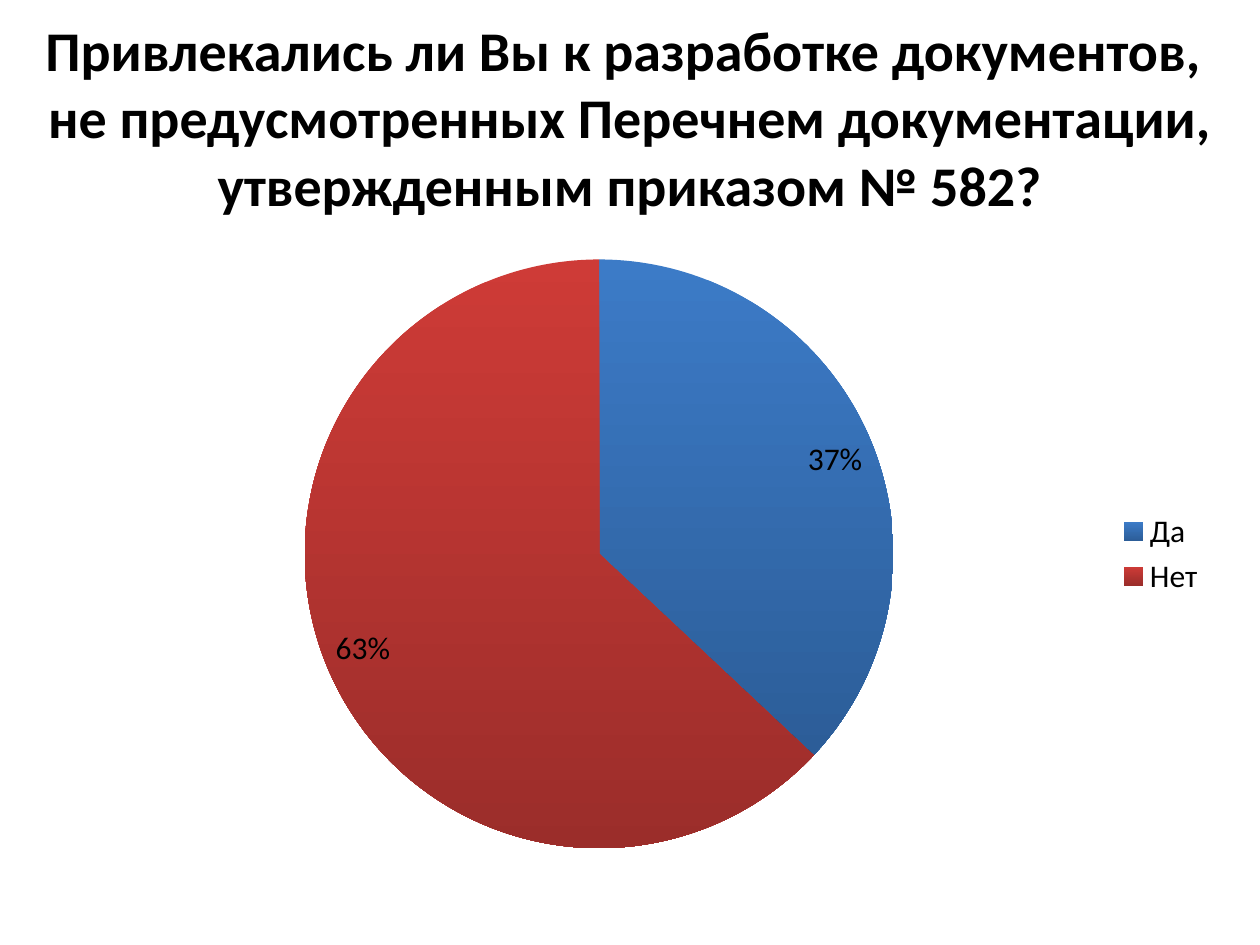
from pptx import Presentation
from pptx.chart.data import CategoryChartData
from pptx.dml.color import RGBColor
from pptx.enum.chart import XL_CHART_TYPE, XL_LABEL_POSITION, XL_LEGEND_POSITION
from pptx.enum.text import MSO_ANCHOR, PP_ALIGN
from pptx.util import Cm, Pt

PIE = XL_CHART_TYPE.PIE
INSIDE_END = XL_LABEL_POSITION.INSIDE_END
RIGHT = XL_LEGEND_POSITION.RIGHT
MIDDLE = MSO_ANCHOR.MIDDLE
CENTER = PP_ALIGN.CENTER

FONT = "Calibri"
COLORS = {
    "text": "000000",
    "yes_top": "3C7BC7",
    "yes_bottom": "2C5D98",
    "no_top": "CE3B37",
    "no_bottom": "9B2D2A",
}


def style_font(font, size, bold=False):
    font.name = FONT
    font.size = Pt(size)
    font.bold = bold
    font.color.rgb = RGBColor.from_string(COLORS["text"])


presentation = Presentation()
presentation.slide_width = Cm(25.4)
presentation.slide_height = Cm(19.05)
slide = presentation.slides.add_slide(presentation.slide_layouts[6])

title = slide.shapes.add_textbox(Cm(0), Cm(0.76), Cm(25.4), Cm(3.18))
text_frame = title.text_frame
text_frame.word_wrap = True
text_frame.vertical_anchor = MIDDLE
text_frame.text = (
    "Привлекались ли Вы к разработке документов, \v"
    "не предусмотренных Перечнем документации, утвержденным приказом № 582?"
)
paragraph = text_frame.paragraphs[0]
paragraph.alignment = CENTER
for run in paragraph.runs:
    style_font(run.font, 32, bold=True)

chart_data = CategoryChartData()
chart_data.categories = ["Да", "Нет"]
chart_data.add_series("Series 1", [37, 63])
chart = slide.shapes.add_chart(
    PIE, Cm(1.7), Cm(4.88), Cm(22.86), Cm(12.57), chart_data
).chart
chart.has_title = False
style_font(chart.font, 18)

chart.has_legend = True
chart.legend.position = RIGHT
chart.legend.include_in_layout = False

plot = chart.plots[0]
plot.vary_by_categories = True
plot.has_data_labels = True
labels = plot.data_labels
labels.show_percentage = True
labels.show_value = False
labels.number_format = "0%"
labels.number_format_is_linked = False
labels.position = INSIDE_END
style_font(labels.font, 18)

for index, answer in enumerate(["yes", "no"]):
    fill = plot.series[0].points[index].format.fill
    fill.gradient()
    fill.gradient_angle = 270
    for stop, edge in zip(fill.gradient_stops, ["top", "bottom"]):
        stop.color.rgb = RGBColor.from_string(COLORS[f"{answer}_{edge}"])

presentation.save("out.pptx")
